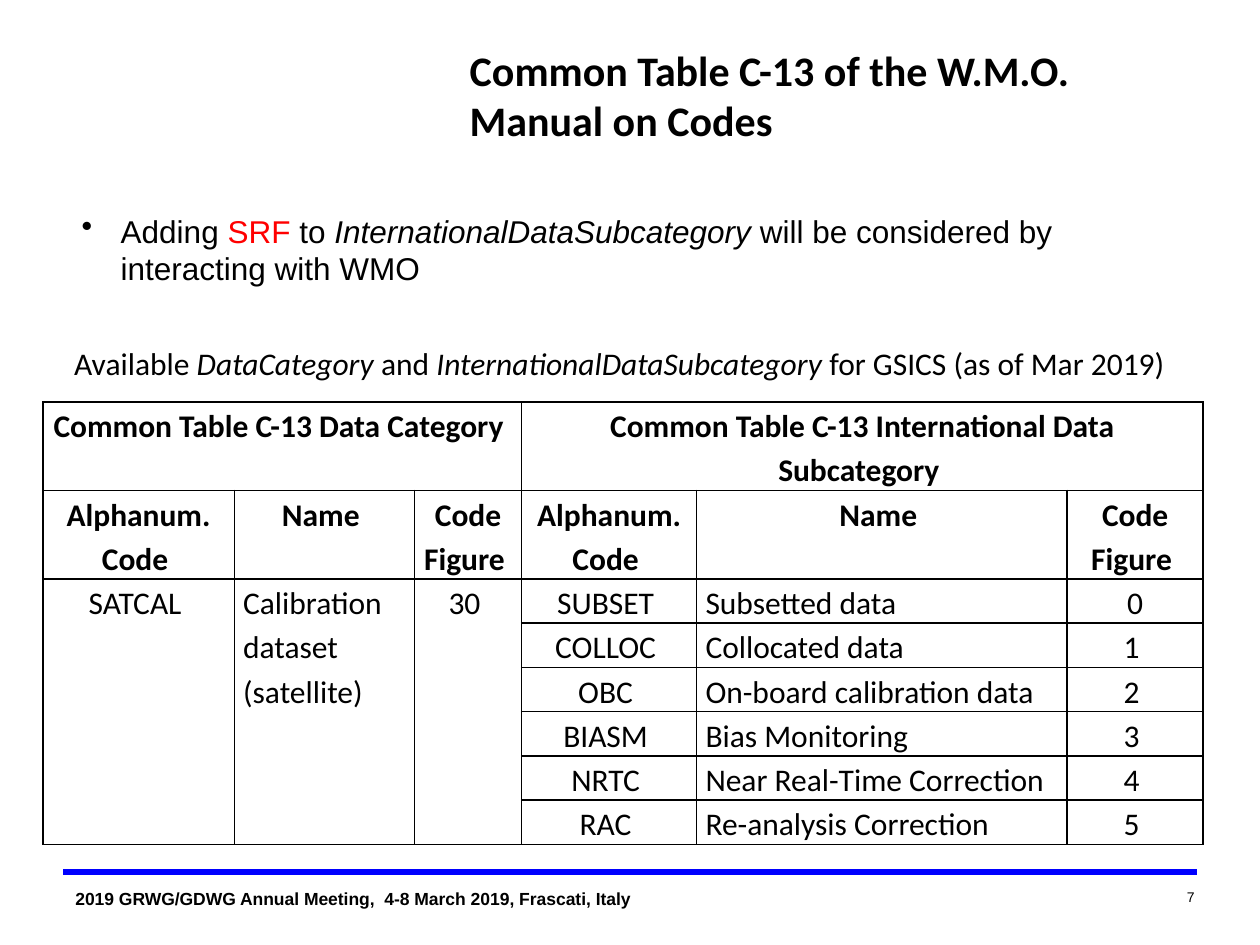
"""Build the Common Table C-13 slide."""
import pptx
import pptx.util
import pptx.dml.color
import pptx.enum.shapes
import pptx.enum.text
import pptx.oxml
import pptx.oxml.ns

Inches, Pt = pptx.util.Inches, pptx.util.Pt
ALIGN = pptx.enum.text.PP_ALIGN
WIDTH, HEIGHT = 10, 7.5
COLORS = {"text": "000000", "accent": "FF0000", "rule": "0000FF"}

TEXTS = [
    ((0.5, 7, 6.67, 0.27), ["2019 GRWG/GDWG Annual Meeting,  4-8 March 2019, Frascati, Italy"],
     dict(size=10, bold=True)),
    ((7.25, 7, 2.33, 0.35), ["7"], dict(size=8, align=ALIGN.RIGHT)),
    ((0.49, 2.68, 8.93, 0.4),
     ["Available ", ("DataCategory", "italic"), " and ",
      ("InternationalDataSubcategory", "italic"), " for GSICS (as of Mar 2019)"],
     dict(font="Calibri")),
    ((3.63, 0.3, 5, 0.91), ["Common Table C-13 of the W.M.O. Manual on Codes"],
     dict(font="Calibri", size=24, bold=True)),
    ((0.55, 1.63, 8.48, 0.71),
     ["Adding ", ("SRF", "accent"), " to ", ("InternationalDataSubcategory", "italic"),
      " will be considered by interacting with WMO"],
     dict(bullet=True)),
]

GROUPS = ["Common Table C-13 Data Category ", "Common Table C-13 International Data Subcategory "]
HEADINGS = ["Alphanum. Code ", "Name ", "Code Figure "]
CATEGORY = ["SATCAL ", "Calibration dataset (satellite)", "30 "]
SUBCATEGORIES = [
    ["SUBSET ", "Subsetted data", "0"],
    ["COLLOC ", "Collocated data", "1 "],
    ["OBC ", "On-board calibration data", "2 "],
    ["BIASM ", "Bias Monitoring", "3 "],
    ["NRTC ", "Near Real-Time Correction", "4 "],
    ["RAC ", "Re-analysis Correction", "5 "],
]
TABLE_BOX = (0.34, 3.19, 9.22, 3.29)
COLUMN_WIDTHS = [1.52, 1.43, 0.85, 1.39, 2.94, 1.08]
ROW_HEIGHT = 0.28
HEADER_ROWS = 2


def rgb(name):
    return pptx.dml.color.RGBColor.from_string(COLORS[name])


def write(frame, pieces, font="Arial", size=18, bold=False, align=None, spacing=None, bullet=False):
    """Fill the first paragraph; a piece is text or a (text, style) pair."""
    frame.word_wrap = True
    paragraph = frame.paragraphs[0]
    paragraph.alignment = align
    paragraph.line_spacing = spacing
    if bullet:
        properties = paragraph._p.get_or_add_pPr()
        properties.set("marL", str(Inches(0.31)))
        properties.set("indent", str(-Inches(0.31)))
        properties.append(pptx.oxml.parse_xml(
            f'<a:buChar {pptx.oxml.ns.nsdecls("a")} char="•"/>'))
    for piece in pieces:
        text, style = (piece, None) if isinstance(piece, str) else piece
        run = paragraph.add_run()
        run.text = text
        run.font.name, run.font.size = font, Pt(size)
        run.font.bold, run.font.italic = bold, style == "italic"
        run.font.color.rgb = rgb("accent" if style == "accent" else "text")


def add_borders(cell):
    properties = cell._tc.get_or_add_tcPr()
    for index, side in enumerate(("lnL", "lnR", "lnT", "lnB")):
        properties.insert(index, pptx.oxml.parse_xml(
            f'<a:{side} {pptx.oxml.ns.nsdecls("a")} w="{Pt(1)}"><a:solidFill>'
            f'<a:srgbClr val="{COLORS["text"]}"/></a:solidFill></a:{side}>'))


def add_code_table(slide):
    rows = [[GROUPS[0], "", "", GROUPS[1], "", ""], HEADINGS * 2]
    for index, subcategory in enumerate(SUBCATEGORIES):
        rows.append((CATEGORY if index == 0 else [""] * 3) + subcategory)
    shape = slide.shapes.add_table(len(rows), len(COLUMN_WIDTHS), *map(Inches, TABLE_BOX))
    table = shape.table
    for column, width in zip(table.columns, COLUMN_WIDTHS):
        column.width = Inches(width)
    for row in table.rows:
        row.height = Inches(ROW_HEIGHT)
    for start in (0, 3):
        table.cell(0, start).merge(table.cell(0, start + 2))
    for column in range(len(CATEGORY)):
        table.cell(HEADER_ROWS, column).merge(table.cell(len(rows) - 1, column))
    for row, values in enumerate(rows):
        for column, value in enumerate(values):
            cell = table.cell(row, column)
            cell.fill.background()
            add_borders(cell)
            cell.margin_left = cell.margin_right = Inches(0.07)
            cell.margin_top = cell.margin_bottom = 0
            header = row < HEADER_ROWS
            is_name = column % 3 == 1 and not header
            if value:
                write(cell.text_frame, [value], font="Calibri", bold=header, spacing=1.15,
                      align=ALIGN.LEFT if is_name else ALIGN.CENTER)


def add_footer_rule(slide):
    margin, y = Inches(WIDTH * 0.05), Inches(6.92)
    rule = slide.shapes.add_connector(
        pptx.enum.shapes.MSO_CONNECTOR.STRAIGHT, margin, y, Inches(WIDTH) - margin, y)
    rule.line.color.rgb, rule.line.width = rgb("rule"), Pt(3)
    rule._element.spPr.append(pptx.oxml.parse_xml(
        f'<a:effectLst {pptx.oxml.ns.nsdecls("a")}/>'))


def main():
    presentation = pptx.Presentation()
    presentation.slide_width, presentation.slide_height = Inches(WIDTH), Inches(HEIGHT)
    slide = presentation.slides.add_slide(presentation.slide_layouts[6])
    add_footer_rule(slide)
    add_code_table(slide)
    for box, pieces, style in TEXTS:
        write(slide.shapes.add_textbox(*map(Inches, box)).text_frame, pieces, **style)
    presentation.save("out.pptx")


if __name__ == "__main__":
    main()
